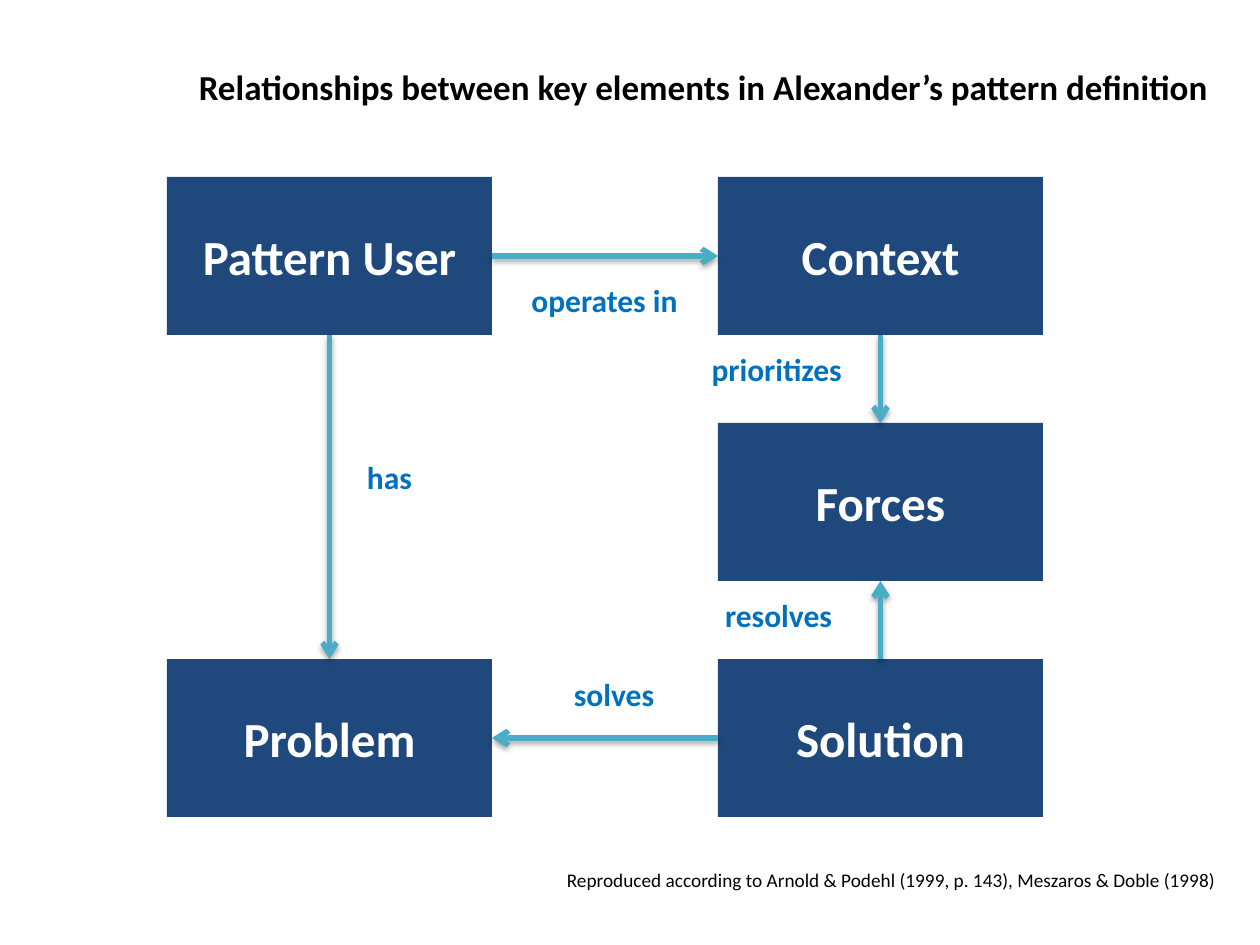
from lxml.etree import SubElement
from pptx import Presentation
from pptx.dml.color import RGBColor
from pptx.enum.shapes import MSO_CONNECTOR, MSO_SHAPE
from pptx.enum.text import MSO_ANCHOR, PP_ALIGN
from pptx.oxml.ns import qn
from pptx.util import Emu, Pt

PX_PER_INCH = 126
NAVY, TEAL, BLUE, BLACK, WHITE = "1F497D", "4BACC6", "0070C0", "000000", "FFFFFF"
LEFT, CENTER, RIGHT = PP_ALIGN.LEFT, PP_ALIGN.CENTER, PP_ALIGN.RIGHT
TOP, RIGHT_SIDE, BOTTOM, LEFT_SIDE = 0, 3, 2, 1  # connection sites of a rectangle
BOX_WIDTH, BOX_HEIGHT = 325, 158


def px(length):
    return Emu(round(length * 914400 / PX_PER_INCH))


def color(hex_string):
    return RGBColor.from_string(hex_string)


def write(shape, text, size=18, bold=True, fill=BLUE, align=CENTER,
          anchor=MSO_ANCHOR.TOP, top_margin=6):
    frame = shape.text_frame
    frame.word_wrap = True
    frame.vertical_anchor = anchor
    frame.margin_left = frame.margin_right = px(13)
    frame.margin_top, frame.margin_bottom = px(top_margin), px(6)
    paragraph = frame.paragraphs[0]
    paragraph.alignment = align
    run = paragraph.add_run()
    run.text = text
    run.font.name = "Calibri"
    run.font.size = Pt(size)
    run.font.bold = bold
    run.font.color.rgb = color(fill)


def add_title(slide, text, left, top, width, height):
    title = slide.shapes.title
    title.left, title.top, title.width, title.height = map(px, (left, top, width, height))
    write(title, text, size=20, fill=BLACK, align=RIGHT)


def add_text(slide, text, left, top, width, height=50, **text_format):
    box = slide.shapes.add_textbox(*map(px, (left, top, width, height)))
    write(box, text, **text_format)


def add_element(slide, text, left, top):
    shape = slide.shapes.add_shape(
        MSO_SHAPE.RECTANGLE, *map(px, (left, top, BOX_WIDTH, BOX_HEIGHT)))
    shape.shadow.inherit = False
    shape.fill.solid()
    shape.fill.fore_color.rgb = color(NAVY)
    shape.line.fill.background()
    write(shape, text, size=28, fill=WHITE, anchor=MSO_ANCHOR.MIDDLE)
    return shape


def add_arrow(slide, start, start_site, end, end_site):
    arrow = slide.shapes.add_connector(MSO_CONNECTOR.STRAIGHT, 0, 0, 0, 0)
    arrow.begin_connect(start, start_site)
    arrow.end_connect(end, end_site)
    arrow.line.color.rgb = color(TEAL)
    arrow.line.width = Pt(3)
    properties = arrow.line._get_or_add_ln()
    SubElement(properties, qn("a:tailEnd"), type="arrow")
    # Soft shadow straight below the line
    effects = SubElement(arrow._element.spPr, qn("a:effectLst"))
    shadow = SubElement(effects, qn("a:outerShdw"), blurRad="40000", dist="23000",
                        dir="5400000", rotWithShape="0")
    shade = SubElement(shadow, qn("a:srgbClr"), val=BLACK)
    SubElement(shade, qn("a:alpha"), val="35000")


def add_diagram(slide, left, top):
    # Elements: two columns, the right one with an extra box
    second_column, middle_row, bottom_row = left + 551, top + 246, top + 482
    user = add_element(slide, "Pattern User", left, top)
    context = add_element(slide, "Context", second_column, top)
    forces = add_element(slide, "Forces", second_column, middle_row)
    solution = add_element(slide, "Solution", second_column, bottom_row)
    problem = add_element(slide, "Problem", left, bottom_row)

    # Relationships
    for relationship in (
        (user, RIGHT_SIDE, context, LEFT_SIDE),
        (user, BOTTOM, problem, TOP),
        (context, BOTTOM, forces, TOP),
        (solution, TOP, forces, BOTTOM),
        (solution, LEFT_SIDE, problem, RIGHT_SIDE),
    ):
        add_arrow(slide, *relationship)

    # Relationship names, offset from the diagram corner
    for text, x, y, width, align in (
        ("operates in", 334, 98, 207, CENTER),
        ("prioritizes", 502, 167, 186, RIGHT),
        ("has", 187, 275, 108, LEFT),
        ("resolves", 492, 413, 186, RIGHT),
        ("solves", 393, 492, 108, CENTER),
    ):
        add_text(slide, text, left + x, top + y, width, align=align)


def main():
    presentation = Presentation()
    presentation.slide_width, presentation.slide_height = px(1260), px(945)
    slide = presentation.slides.add_slide(presentation.slide_layouts[5])
    add_title(slide, "Relationships between key elements in Alexander’s pattern definition",
              147, 59, 1074, 55)
    add_diagram(slide, 167, 177)
    # Source line
    add_text(slide, "Reproduced according to Arnold & Podehl (1999, p. 143), "
             "Meszaros & Doble (1998)", 266, 857, 963, 43,
             size=11, bold=False, fill=BLACK, align=RIGHT, top_margin=11)
    presentation.save("out.pptx")


if __name__ == "__main__":
    main()
